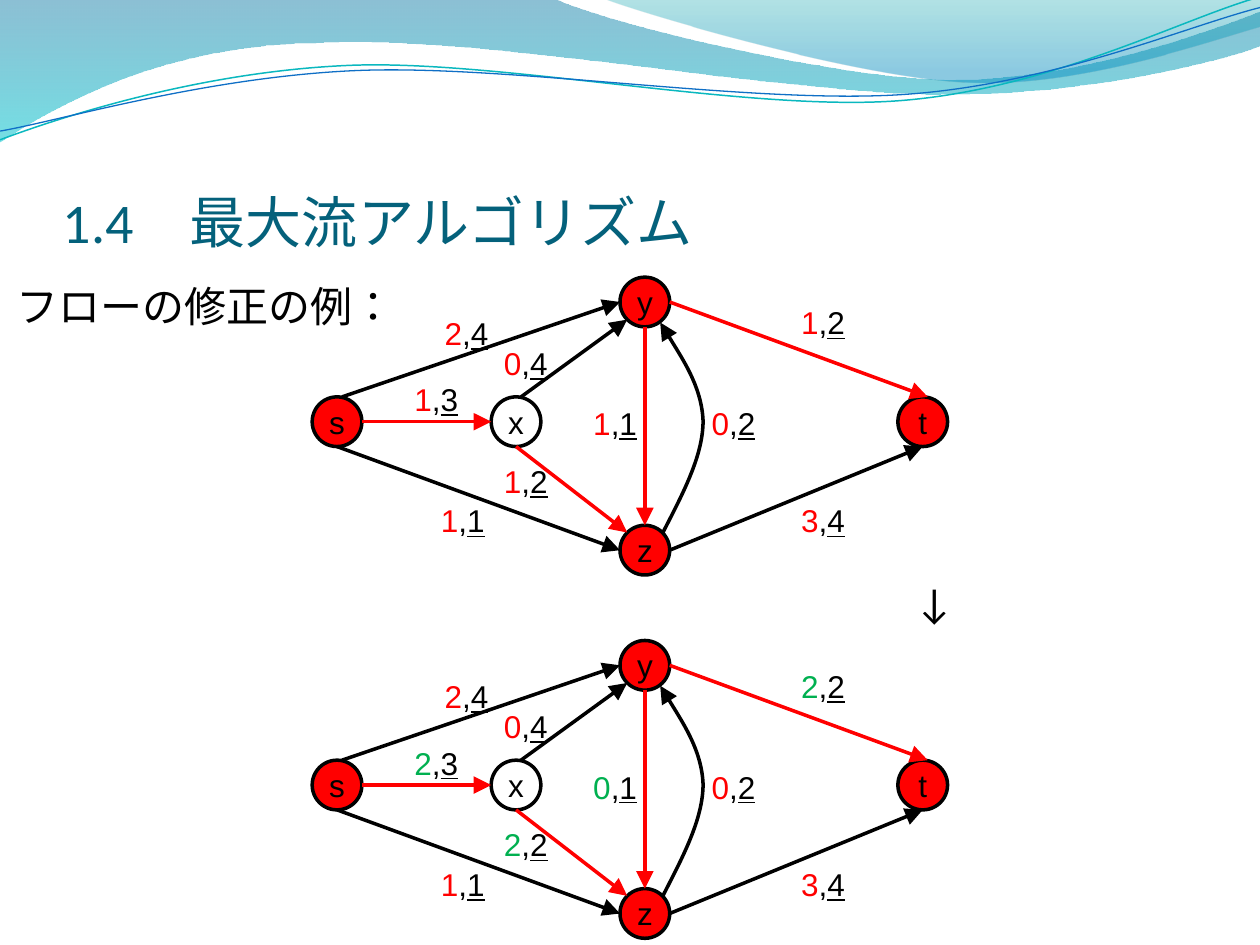
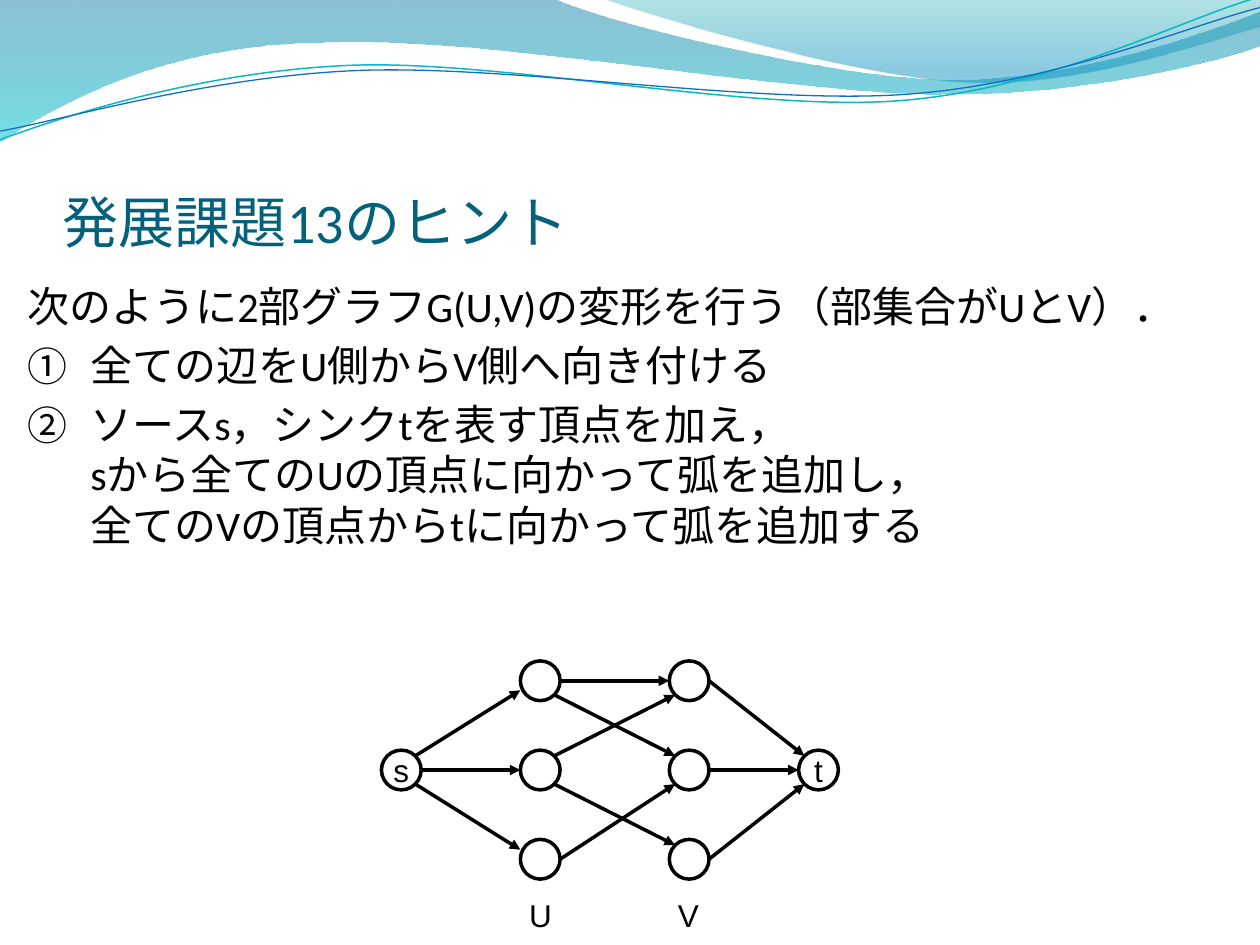
from dataclasses import dataclass
from typing import NamedTuple

from lxml import etree
from pptx import Presentation
from pptx.dml.color import RGBColor
from pptx.enum.lang import MSO_LANGUAGE_ID
from pptx.enum.shapes import MSO_CONNECTOR, MSO_SHAPE
from pptx.enum.text import MSO_ANCHOR, PP_ALIGN
from pptx.oxml.ns import qn
from pptx.util import Pt

ELLIPSE = MSO_SHAPE.OVAL
STRAIGHT = MSO_CONNECTOR.STRAIGHT
TOP, BOTTOM = MSO_ANCHOR.TOP, MSO_ANCHOR.BOTTOM
LEFT, CENTER = PP_ALIGN.LEFT, PP_ALIGN.CENTER
JAPANESE = MSO_LANGUAGE_ID.JAPANESE

BLACK, RED, GREEN, TITLE_COLOR = "000000", "FF0000", "00B050", "04617B"
BODY_FONT, GRAPH_FONT = "Calibri", "Arial"
BODY_SIZE, GRAPH_SIZE = 24, 18
LINE_WIDTH = 2
LABEL_HEIGHT = 28.8
BODY_TOP = 157

# Attachment points of a node, in radii from its centre
DIAGONAL = 0.71
SITES = {
    "n": (0, -1), "e": (1, 0), "s": (0, 1), "w": (-1, 0),
    "ne": (DIAGONAL, -DIAGONAL), "se": (DIAGONAL, DIAGONAL),
    "sw": (-DIAGONAL, DIAGONAL), "nw": (-DIAGONAL, -DIAGONAL),
    "nne": (0.2, -1), "wsw": (-1, 0.48), "wnw": (-1, -0.48),
}


class Run(NamedTuple):
    text: str
    color: str = BLACK
    underline: bool = False


class Paragraph(NamedTuple):
    runs: list[Run]
    hanging: float = 0
    numbered: bool = False


class GradientStop(NamedTuple):
    position: float
    color: str
    opacity: int


@dataclass
class Node:
    x: float
    y: float
    label: str = ""
    fill: str | None = None


@dataclass
class Edge:
    start: str
    start_site: str
    end: str
    end_site: str
    color: str = BLACK


@dataclass
class FlowLabel:
    """Flow before and after the correction, and the capacity of an arc."""
    left: float
    top: float
    before: int
    after: int
    capacity: int


@dataclass
class Outline:
    """Points in pt: pairs are straight segments, sextuples cubic curves."""
    start: tuple
    segments: list[tuple]
    closed: bool = False
    line: tuple | None = None
    gradient: tuple | None = None


WAVES = [
    Outline((0, -0.7), [
        (316.8, -0.7), (342.7, 12.2, 478, 45.4, 545.8, 45.4),
        (614.2, 45.4, 689.8, 18.7, 720, 6.5), (720.7, 25.9),
        (707.8, 31.7, 626.4, 54.7, 537.1, 54),
        (447.8, 54, 275, 20.2, 185, 24.5),
        (92.9, 25.2, 33.1, 59.8, -0.7, 81.4)],
        closed=True,
        gradient=(GradientStop(0, "0074A1", 45), GradientStop(1, "00C6CF", 55))),
    Outline((344.9, -0.7), [
        (366.5, 7.9, 491, 44.6, 553.7, 46.8),
        (616.3, 49.7, 691.9, 23, 720, 15.1), (720, -0.7)],
        closed=True,
        gradient=(GradientStop(0, "00A1A9", 30), GradientStop(0.8, "008BBF", 45))),
    Outline((0, 79.9), [
        (34.6, 67, 113.8, 41, 199.4, 37.4),
        (284.4, 33.8, 427, 64.1, 513.4, 57.6),
        (599.8, 51.1, 675.4, 10.8, 718.6, -1.4)],
        line=("0AB8BF", 0.85)),
    Outline((0, 74.9), [
        (33.8, 69.1, 118.1, 43.9, 203.8, 40.3),
        (290.2, 36.7, 429.8, 59.8, 516.2, 54),
        (601.9, 48.2, 677.5, 15.1, 720, 4.3)],
        line=("0F6FC6", 0.75)),
]


def rgb(color: str) -> RGBColor:
    return RGBColor.from_string(color)


def add_text(slide, left: float, top: float, width: float, height: float,
             paragraphs: list[Paragraph], *, font: str = BODY_FONT,
             size: float = BODY_SIZE, align=LEFT, anchor=TOP, wrap: bool = True,
             insets: tuple = (7.2, 3.6, 7.2, 3.6), space_before: float = 0) -> None:
    frame = slide.shapes.add_textbox(
        Pt(left), Pt(top), Pt(width), Pt(height)).text_frame
    frame.word_wrap = wrap
    frame.vertical_anchor = anchor
    (frame.margin_left, frame.margin_top,
     frame.margin_right, frame.margin_bottom) = map(Pt, insets)
    for index, content in enumerate(paragraphs):
        paragraph = frame.add_paragraph() if index else frame.paragraphs[0]
        paragraph.alignment = align
        paragraph.space_before = Pt(space_before)
        set_indent(paragraph, content)
        for part in content.runs:
            for number, line in enumerate(part.text.split("\n")):
                if number:
                    paragraph.add_line_break()
                run = paragraph.add_run()
                run.text = line
                run.font.name = font
                run.font.size = Pt(size)
                run.font.color.rgb = rgb(part.color)
                run.font.language_id = JAPANESE
                if part.underline:
                    run.font.underline = True


def set_indent(paragraph, content: Paragraph) -> None:
    properties = paragraph._p.get_or_add_pPr()
    if content.hanging:
        properties.set("marL", str(Pt(content.hanging)))
        properties.set("indent", str(-Pt(content.hanging)))
    if content.numbered:
        etree.SubElement(properties, qn("a:buSzPct"), val="95000")
        etree.SubElement(properties, qn("a:buAutoNum"), type="circleNumDbPlain")


def style_line(shape, color: str, width: float = LINE_WIDTH,
               arrow: str | None = None) -> None:
    """Set the line; arrow is the size (med, lg) of the head at its end."""
    shape.line.color.rgb = rgb(color)
    shape.line.width = Pt(width)
    if arrow:
        etree.SubElement(shape._element.spPr.find(qn("a:ln")), qn("a:tailEnd"),
                         type="triangle", w=arrow, len=arrow)


def fill_gradient(shape, stops: tuple) -> None:
    shape.fill.gradient()
    shape.fill.gradient_angle = 270
    for target, stop in zip(shape.fill.gradient_stops, stops):
        target.position = stop.position
        target.color.rgb = rgb(stop.color)
    colors = shape._element.spPr.iter(qn("a:srgbClr"))
    for color, stop in zip(list(colors), stops):
        etree.SubElement(color, qn("a:alpha"), val=str(stop.opacity * 1000))


def add_outline(slide, outline: Outline, dy: float = 0, arrow: str | None = None) -> None:
    points = [(Pt(x), Pt(y + dy)) for segment in outline.segments
              for x, y in zip(segment[::2], segment[1::2])]
    start_x, start_y = outline.start
    builder = slide.shapes.build_freeform(Pt(start_x), Pt(start_y + dy))
    builder.add_line_segments(points, close=outline.closed)
    shape = builder.convert_to_shape()
    shape.shadow.inherit = False

    steps = iter(list(shape._element.spPr.iter(qn("a:lnTo"))))
    for segment in outline.segments:
        group = [next(steps) for _ in segment[::2]]
        if len(group) == 3:
            curve = etree.Element(qn("a:cubicBezTo"))
            group[0].addprevious(curve)
            for step in group:
                curve.append(step[0])
                step.getparent().remove(step)

    if outline.gradient:
        fill_gradient(shape, outline.gradient)
    else:
        shape.fill.background()
    if outline.line:
        style_line(shape, *outline.line, arrow=arrow)
    else:
        shape.line.fill.background()


def add_label(slide, x: float, y: float, text: str) -> None:
    """Write a short graph label centred on a point."""
    width = 24
    add_text(slide, x - width / 2, y - LABEL_HEIGHT / 2, width, LABEL_HEIGHT,
             [Paragraph([Run(text)])], font=GRAPH_FONT, size=GRAPH_SIZE,
             align=CENTER, wrap=False)


def add_graph(slide, nodes: dict[str, Node], edges: list[Edge], radius: float,
              arrow: str, dy: float = 0) -> None:
    for node in nodes.values():
        circle = slide.shapes.add_shape(
            ELLIPSE, Pt(node.x - radius), Pt(node.y + dy - radius),
            Pt(2 * radius), Pt(2 * radius))
        circle.shadow.inherit = False
        if node.fill:
            circle.fill.solid()
            circle.fill.fore_color.rgb = rgb(node.fill)
        else:
            circle.fill.background()
        style_line(circle, BLACK)

    def site(name: str, side: str) -> tuple:
        across, down = SITES[side]
        node = nodes[name]
        return Pt(node.x + across * radius), Pt(node.y + dy + down * radius)

    for edge in edges:
        arc = slide.shapes.add_connector(
            STRAIGHT, *site(edge.start, edge.start_site),
            *site(edge.end, edge.end_site))
        style_line(arc, edge.color, arrow=arrow)
        etree.SubElement(arc._element.spPr, qn("a:effectLst"))
    for node in nodes.values():
        if node.label:
            add_label(slide, node.x, node.y + dy, node.label)


def add_base_slide(prs, title: str):
    slide = prs.slides.add_slide(prs.slide_layouts[6])
    for wave in WAVES:
        add_outline(slide, wave)
    add_text(slide, 36, 55.4, 648, 90, [Paragraph([Run(title, TITLE_COLOR)])],
             size=32, anchor=BOTTOM, insets=(0, 3.6, 0, 0))
    return slide


def add_max_flow_slide(prs) -> None:
    slide = add_base_slide(prs, "1.4　最大流アルゴリズム")
    for left, top, width, text in ((2.2, BODY_TOP, 300, "フローの修正の例："),
                                   (516, 325.7, 40, "↓")):
        add_text(slide, left, top, width, 40, [Paragraph([Run(text)])],
                 space_before=4.8)
    nodes = {
        "s": Node(192.6, 241, "s", RED), "x": Node(294.9, 241, "x"),
        "y": Node(368.5, 172.6, "y", RED), "z": Node(368.5, 314.4, "z", RED),
        "t": Node(527.3, 241, "t", RED),
    }
    edges = [
        Edge("s", "e", "x", "w", RED), Edge("s", "nne", "y", "w"),
        Edge("s", "s", "z", "w"), Edge("x", "nne", "y", "sw"),
        Edge("x", "s", "z", "nw", RED), Edge("y", "e", "t", "nne", RED),
        Edge("z", "e", "t", "s"), Edge("y", "s", "z", "n", RED),
    ]
    return_arc = Outline((378.7, 304.6), [
        (390.2, 282.2, 401.8, 260.6, 401.8, 240.5),
        (401, 220.3, 377.3, 184.3, 377.3, 184.3)], line=(BLACK, LINE_WIDTH))
    flows = [
        FlowLabel(229.7, 213.8, 1, 2, 3), FlowLabel(247, 175.7, 2, 2, 4),
        FlowLabel(244.8, 283, 1, 1, 1), FlowLabel(280.8, 260.6, 1, 2, 2),
        FlowLabel(280.8, 193, 0, 0, 4), FlowLabel(331.9, 227.5, 1, 0, 1),
        FlowLabel(399.6, 227.5, 0, 0, 2), FlowLabel(450.7, 169.9, 1, 2, 2),
        FlowLabel(450.7, 283, 3, 3, 4),
    ]
    for corrected, dy in ((False, 0), (True, 207.6)):
        add_graph(slide, nodes, edges, 14.2, "lg", dy)
        add_outline(slide, return_arc, dy, arrow="lg")
        for flow in flows:
            value = flow.after if corrected else flow.before
            color = RED if value == flow.before else GREEN
            runs = [Run(str(value), color), Run(","),
                    Run(str(flow.capacity), underline=True)]
            add_text(slide, flow.left, flow.top + dy, 39.6, LABEL_HEIGHT,
                     [Paragraph(runs)], font=GRAPH_FONT, size=GRAPH_SIZE, wrap=False)


def add_hint_slide(prs) -> None:
    slide = add_base_slide(prs, "発展課題13のヒント")
    add_text(slide, 8.6, BODY_TOP, 671.8, 200, [
        Paragraph([Run("次のように2部グラフG(U,V)の変形を行う（部集合がUとV）．")], 21.6),
        Paragraph([Run("全ての辺をU側からV側へ向き付ける")], 36, True),
        Paragraph([Run("ソースs，シンクtを表す頂点を加え，\n"
                       "sから全てのUの頂点に向かって弧を追加し，\n"
                       "全てのVの頂点からtに向かって弧を追加する")], 36, True),
    ], space_before=4.8)
    middle, row_gap = 440, 51
    columns = {"U": 308.7, "V": 393.8}
    nodes = {"s": Node(229.3, middle, "s"), "t": Node(467.7, middle, "t")}
    for part, x in columns.items():
        for row in (1, 2, 3):
            nodes[f"{part}{row}"] = Node(x, middle + (row - 2) * row_gap)
        add_label(slide, x - 1.5, 522.7, part)
    edges = [
        Edge("s", "ne", "U1", "wsw"), Edge("s", "e", "U2", "w"),
        Edge("s", "se", "U3", "wnw"), Edge("V2", "e", "t", "w"),
        Edge("V1", "e", "t", "nw"), Edge("V3", "e", "t", "sw"),
        Edge("U1", "se", "V2", "nw"), Edge("U1", "e", "V1", "w"),
        Edge("U2", "ne", "V1", "sw"), Edge("U2", "se", "V3", "nw"),
        Edge("U3", "e", "V2", "sw"),
    ]
    add_graph(slide, nodes, edges, 11.35, "med")


def main() -> None:
    prs = Presentation()
    prs.slide_width, prs.slide_height = Pt(720), Pt(540)
    add_max_flow_slide(prs)
    add_hint_slide(prs)
    prs.save("out.pptx")


if __name__ == "__main__":
    main()
